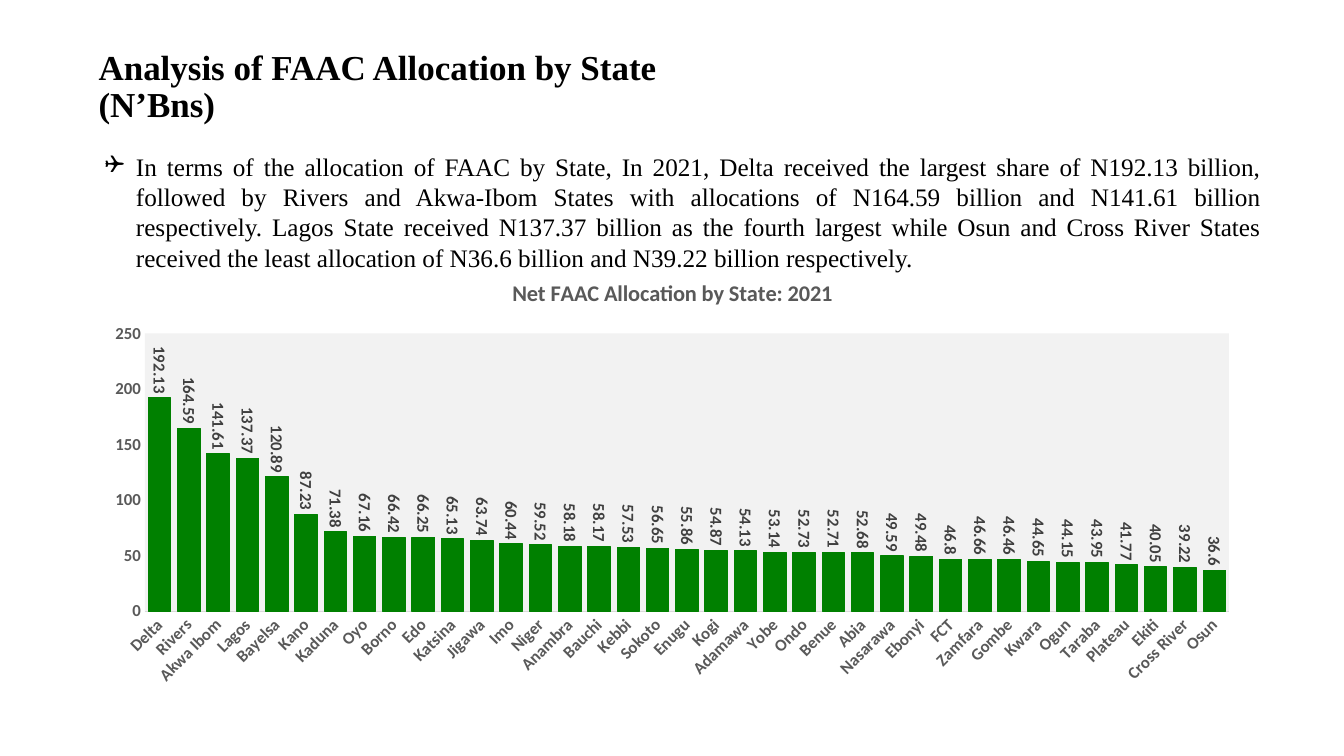
from lxml import etree
from pptx import Presentation
from pptx.chart.data import CategoryChartData
from pptx.dml.color import RGBColor
from pptx.enum.chart import XL_CHART_TYPE as ChartType, XL_LABEL_POSITION as LabelPosition
from pptx.enum.chart import XL_TICK_MARK as TickMark
from pptx.enum.text import MSO_ANCHOR as Anchor, PP_ALIGN as Align
from pptx.oxml import parse_xml
from pptx.oxml.ns import nsdecls, qn
from pptx.util import Pt

PX = 9144  # 100 px to the inch
COLORS = {"text": "000000", "bar": "008000", "plot": "F2F2F2",
          "axis_text": "595959", "label": "404040", "axis_line": "D9D9D9"}
SERIF, SANS = "Times New Roman", "Calibri"

TITLE = "Analysis of FAAC Allocation by State (N’Bns)"
SUMMARY = (
    "In terms of the allocation of FAAC by State, In 2021, Delta received the largest share "
    "of N192.13 billion, followed by Rivers and Akwa-Ibom States with allocations of N164.59 "
    "billion and N141.61 billion respectively. Lagos State received N137.37 billion as the "
    "fourth largest while Osun and Cross River States received the least allocation of N36.6 "
    "billion and N39.22 billion respectively.")
CHART_TITLE = "Net FAAC Allocation by State: 2021"
ALLOCATIONS = {
    "Delta": 192.13, "Rivers": 164.59, "Akwa Ibom": 141.61, "Lagos": 137.37,
    "Bayelsa": 120.89, "Kano": 87.23, "Kaduna": 71.38, "Oyo": 67.16, "Borno": 66.42,
    "Edo": 66.25, "Katsina": 65.13, "Jigawa": 63.74, "Imo": 60.44, "Niger": 59.52,
    "Anambra": 58.18, "Bauchi": 58.17, "Kebbi": 57.53, "Sokoto": 56.65, "Enugu": 55.86,
    "Kogi": 54.87, "Adamawa": 54.13, "Yobe": 53.14, "Ondo": 52.73, "Benue": 52.71,
    "Abia": 52.68, "Nasarawa": 49.59, "Ebonyi": 49.48, "FCT": 46.8, "Zamfara": 46.66,
    "Gombe": 46.46, "Kwara": 44.65, "Ogun": 44.15, "Taraba": 43.95, "Plateau": 41.77,
    "Ekiti": 40.05, "Cross River": 39.22, "Osun": 36.6,
}


def color(name):
    return RGBColor.from_string(COLORS[name])


def style(font, face, size, color_name, bold=False):
    font.name, font.size, font.bold = face, Pt(size), bold
    font.color.rgb = color(color_name)


def add_text(slide, box, text, size, bold=False):
    """Add a wrapped serif text box and return its frame."""
    frame = slide.shapes.add_textbox(*(n * PX for n in box)).text_frame
    frame.word_wrap = True
    frame.text = text
    style(frame.paragraphs[0].runs[0].font, SERIF, size, "text", bold)
    return frame


def add_title(slide, box):
    frame = add_text(slide, box, TITLE, 25, bold=True)
    frame.vertical_anchor = Anchor.MIDDLE
    frame.paragraphs[0].line_spacing = 0.9


def add_summary(slide, box):
    paragraph = add_text(slide, box, SUMMARY, 18).paragraphs[0]
    paragraph.alignment = Align.JUSTIFY
    properties = paragraph._p.get_or_add_pPr()
    properties.set("marL", str(31 * PX))
    properties.set("indent", str(-31 * PX))
    etree.SubElement(properties, qn("a:buFont"), typeface="Wingdings")
    etree.SubElement(properties, qn("a:buChar"), char="❑")


def rotate_text(owner, degrees):
    body = owner.find(qn("c:txPr")).find(qn("a:bodyPr"))
    body.set("rot", str(degrees * 60000))
    body.set("vert", "horz")


def format_plot_area(chart):
    """Place the inner plot area and give it its background."""
    area = chart._chartSpace.chart.plotArea
    for old in area.findall(qn("c:layout")):
        area.remove(old)
    place = {"x": 0.045, "y": 0.167, "w": 0.935, "h": 0.634}
    modes = '<c:xMode val="edge"/><c:yMode val="edge"/>'
    sizes = "".join(f'<c:{key} val="{value}"/>' for key, value in place.items())
    area.insert(0, parse_xml(
        f'<c:layout {nsdecls("c")}><c:manualLayout><c:layoutTarget val="inner"/>'
        f'{modes}{sizes}</c:manualLayout></c:layout>'))
    area.append(parse_xml(
        f'<c:spPr {nsdecls("c", "a")}><a:solidFill><a:srgbClr val="{COLORS["plot"]}"/>'
        '</a:solidFill><a:ln><a:noFill/></a:ln></c:spPr>'))


def add_allocation_chart(slide, box):
    data = CategoryChartData(number_format="General")
    data.categories = list(ALLOCATIONS)
    data.add_series("Series 1", list(ALLOCATIONS.values()))
    chart = slide.shapes.add_chart(
        ChartType.COLUMN_CLUSTERED, *(n * PX for n in box), data).chart
    style(chart.font, SANS, 12, "text", bold=True)
    chart.has_legend = False
    chart.has_title = True
    heading = chart.chart_title.text_frame
    heading.text = CHART_TITLE
    style(heading.paragraphs[0].runs[0].font, SANS, 16, "axis_text", bold=True)

    states, amounts = chart.category_axis, chart.value_axis
    for axis in (states, amounts):
        axis.has_major_gridlines = False
        axis.major_tick_mark = axis.minor_tick_mark = TickMark.NONE
        style(axis.tick_labels.font, SANS, 12, "axis_text", bold=True)
    states.format.line.color.rgb = color("axis_line")
    states.format.line.width = Pt(0.75)
    rotate_text(states._element, -45)
    amounts.format.line.fill.background()
    amounts.minimum_scale, amounts.maximum_scale, amounts.major_unit = 0, 250, 50

    plot = chart.plots[0]
    plot.gap_width, plot.overlap, plot.vary_by_categories = 30, -27, False
    bars = plot.series[0]
    bars.format.fill.solid()
    bars.format.fill.fore_color.rgb = color("bar")
    bars.format.line.color.rgb = color("bar")
    bars.format.line.width = Pt(0.75)
    labels = bars.data_labels
    labels.show_value = True
    labels.position = LabelPosition.OUTSIDE_END
    style(labels.font, SANS, 12, "label", bold=True)
    rotate_text(labels._element, 90)
    format_plot_area(chart)


def main():
    deck = Presentation()
    deck.slide_width, deck.slide_height = 1333 * PX, 750 * PX
    slide = deck.slides.add_slide(deck.slide_layouts[6])
    add_allocation_chart(slide, (92, 258, 1150, 435))
    add_summary(slide, (94, 145, 1167, 131))
    add_title(slide, (88, 32, 677, 110))
    deck.save("out.pptx")


if __name__ == "__main__":
    main()
